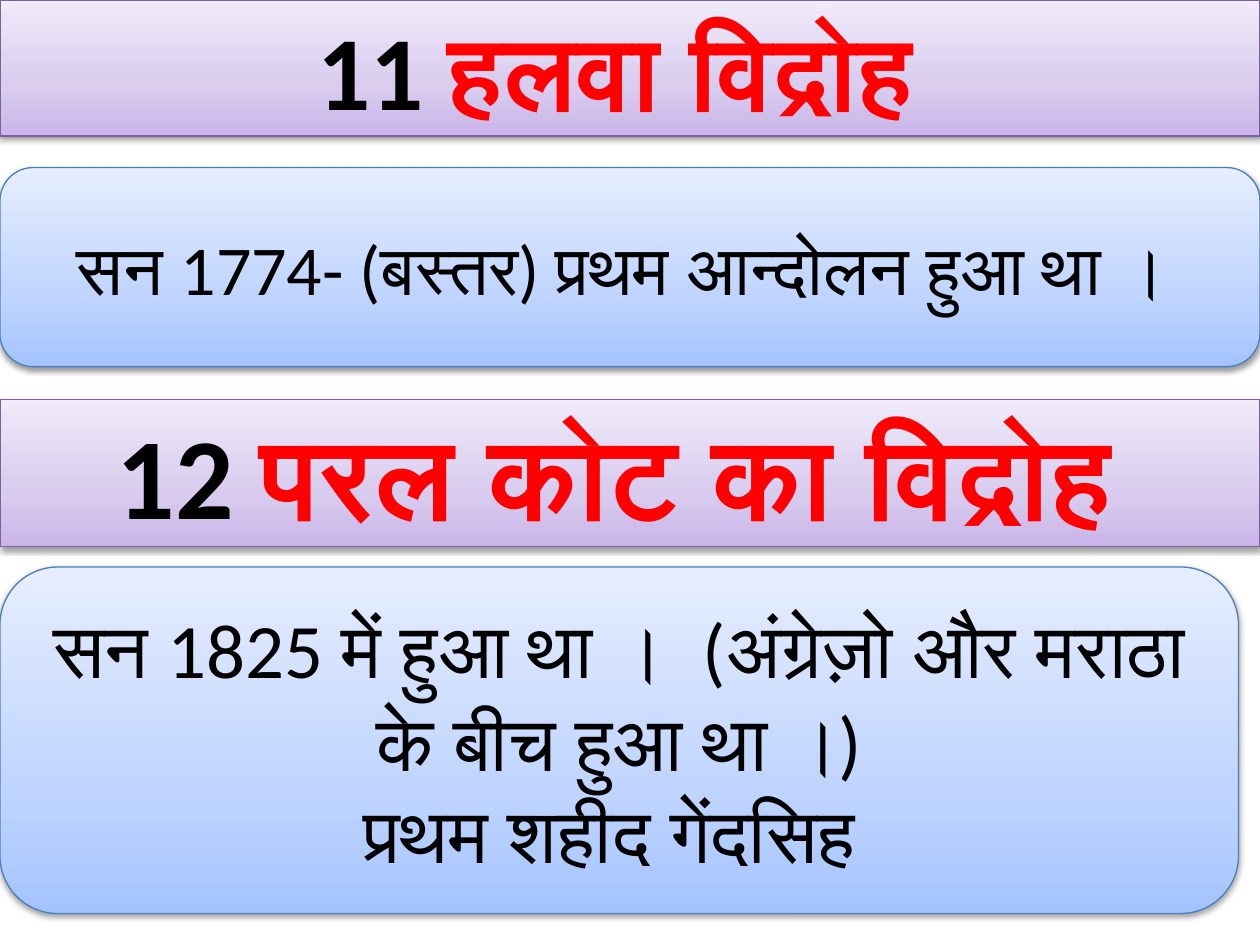
from copy import deepcopy

from lxml.etree import SubElement
from pptx import Presentation
from pptx.dml.color import RGBColor
from pptx.enum.shapes import MSO_SHAPE
from pptx.enum.text import MSO_ANCHOR, MSO_AUTO_SIZE, PP_ALIGN
from pptx.oxml.ns import qn
from pptx.util import Inches, Pt

BLACK = RGBColor(0x00, 0x00, 0x00)
RED = RGBColor(0xFF, 0x00, 0x00)
PURPLE_LINE = RGBColor(0x7D, 0x60, 0xA0)
BLUE_LINE = RGBColor(0x4B, 0x7E, 0xBC)
PURPLES = [RGBColor(0xC9, 0xB5, 0xE8), RGBColor(0xD8, 0xCB, 0xEE), RGBColor(0xF0, 0xEA, 0xF9)]
BLUES = [RGBColor(0xA4, 0xC4, 0xFF), RGBColor(0xBF, 0xD4, 0xFF), RGBColor(0xE6, 0xEE, 0xFF)]
STOPS = [0, 0.35, 1]

# Content: each paragraph is a list of (text, colour) runs
TITLE = dict(box=(0, 0, 10, 1.08), size=60,
             paragraphs=[[("11 ", BLACK), ("हलवा विद्रोह ", RED)]])
HALBA = dict(box=(0, 1.33, 10, 1.58), size=40,
             paragraphs=[[("सन 1774- (बस्तर) प्रथम आन्दोलन हुआ था । ", BLACK)]])
HEADING = dict(box=(0, 3.17, 10, 1.17), size=66,
               paragraphs=[[("12 ", BLACK), ("परल कोट का विद्रोह ", RED)]])
PARALKOT = dict(box=(0, 4.5, 9.83, 2.75), size=44,
                paragraphs=[[("सन 1825 में हुआ था ।  (अंग्रेज़ो और मराठा के बीच हुआ था ।)", BLACK)],
                            [("प्रथम शहीद गेंदसिह ", BLACK)]])


def set_gradient(sp, colors):
    sp.fill.gradient()
    sp.fill.gradient_angle = 90
    gs_list = sp._element.spPr.find(qn("a:gradFill")).find(qn("a:gsLst"))
    gs_list.append(deepcopy(gs_list[-1]))
    for stop, position, color in zip(sp.fill.gradient_stops, STOPS, colors):
        stop.position = position
        stop.color.rgb = color


def set_shadow(sp):
    sp.shadow.inherit = False
    effects = sp._element.spPr.find(qn("a:effectLst"))
    shadow = SubElement(effects, qn("a:outerShdw"), blurRad=str(Pt(3.1)),
                        dist=str(Pt(1.6)), dir="5400000", rotWithShape="0")
    color = SubElement(shadow, qn("a:srgbClr"), val=str(BLACK))
    SubElement(color, qn("a:alpha"), val="38000")


def format_panel(sp, content, colors, line_color, bold):
    sp.left, sp.top, sp.width, sp.height = map(Inches, content["box"])
    set_gradient(sp, colors)
    sp.line.color.rgb = line_color
    sp.line.width = Pt(0.75)
    set_shadow(sp)

    tf = sp.text_frame
    tf.word_wrap = True
    tf.auto_size = MSO_AUTO_SIZE.NONE
    tf.vertical_anchor = MSO_ANCHOR.MIDDLE
    for i, runs in enumerate(content["paragraphs"]):
        p = tf.add_paragraph() if i else tf.paragraphs[0]
        p.alignment = PP_ALIGN.CENTER
        p.font.name = "Calibri"
        p.font.size = Pt(content["size"])
        p.font.bold = bold
        for text, color in runs:
            r = p.add_run()
            r.text = text
            r.font.color.rgb = color


def add_panel(s, preset, content, *style):
    sp = s.shapes.add_shape(preset, *map(Inches, content["box"]))
    format_panel(sp, content, *style)


def main():
    prs = Presentation()
    prs.slide_width, prs.slide_height = Inches(10), Inches(7.5)
    s = prs.slides.add_slide(prs.slide_layouts[5])
    heading_style = (PURPLES, PURPLE_LINE, True)
    body_style = (BLUES, BLUE_LINE, False)

    # First revolt
    format_panel(s.shapes.title, TITLE, *heading_style)
    add_panel(s, MSO_SHAPE.ROUNDED_RECTANGLE, HALBA, *body_style)

    # Second revolt
    add_panel(s, MSO_SHAPE.RECTANGLE, HEADING, *heading_style)
    add_panel(s, MSO_SHAPE.ROUNDED_RECTANGLE, PARALKOT, *body_style)

    prs.save("out.pptx")


if __name__ == "__main__":
    main()
